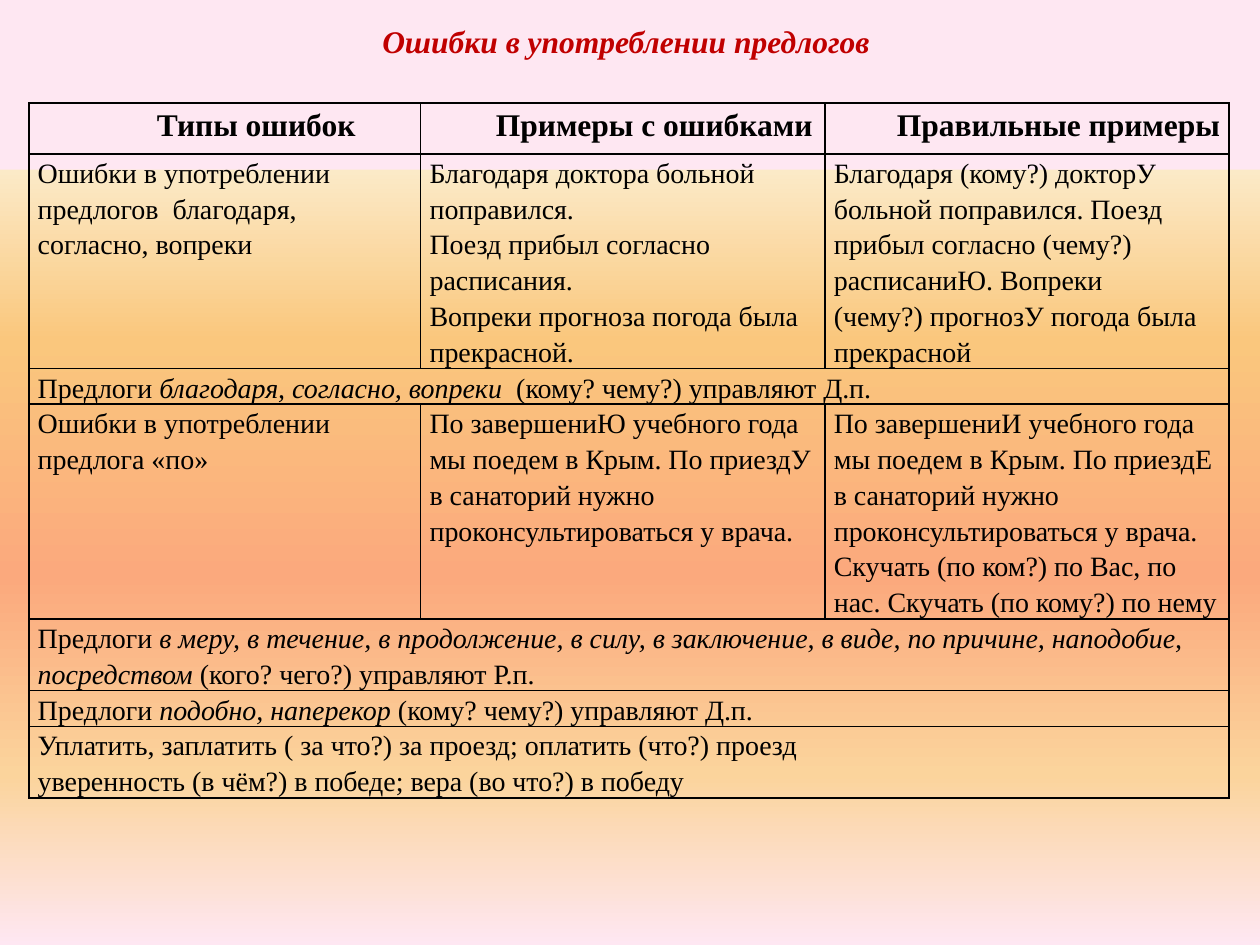
from lxml.etree import SubElement
from pptx import Presentation
from pptx.dml.color import RGBColor
from pptx.enum.text import MSO_ANCHOR, PP_ALIGN
from pptx.oxml.ns import qn
from pptx.util import Cm, Pt

FONT = "Times New Roman"
BLACK, RED = "000000", "C00000"
GRADIENT = [(0, "FEE7F2"), (17.9, "FEE7F2"), (18, "FBEAC7"), (36, "FAC77D"),
            (61, "FBA97D"), (82, "FBD49C"), (100, "FEE7F2")]

TITLE = "Ошибки в употреблении предлогов"
COLUMN_WIDTHS = [7.9, 8.15, 8.15]
ROW_HEIGHTS = [1.02, 3.07, 0.51, 4.11, 1.02, 0.51, 1.02]
JUSTIFIED_FROM = 5
# Each cell is a list of paragraphs; asterisks enclose italics.
# A row with a single cell spans the whole table.
ROWS = [
    [["Типы ошибок"], ["Примеры с ошибками"], ["Правильные примеры"]],
    [["Ошибки в употреблении предлогов  благодаря, согласно, вопреки"],
     ["Благодаря доктора больной поправился.",
      "Поезд прибыл согласно расписания.",
      "Вопреки прогноза погода была прекрасной."],
     ["Благодаря (кому?) докторУ больной поправился. Поезд прибыл "
      "согласно (чему?) расписаниЮ. Вопреки",
      "(чему?) прогнозУ погода была прекрасной"]],
    [["Предлоги *благодаря, согласно, вопреки * (кому? чему?) управляют Д.п."]],
    [["Ошибки в употреблении предлога «по»"],
     ["По завершениЮ учебного года мы поедем в Крым. По приездУ "
      "в санаторий нужно проконсультироваться у врача."],
     ["По завершениИ учебного года мы поедем в Крым. По приездЕ "
      "в санаторий нужно проконсультироваться у врача.",
      "Скучать (по ком?) по Вас, по нас. Скучать (по кому?) по нему"]],
    [["Предлоги *в меру, в течение, в продолжение, в силу, в заключение, "
      "в виде, по причине, наподобие, посредством *(кого? чего?) управляют Р.п."]],
    [["Предлоги *подобно, наперекор* (кому? чему?) управляют Д.п."]],
    [["Уплатить, заплатить ( за что?) за проезд; оплатить (что?) проезд",
      "уверенность (в чём?) в победе; вера (во что?) в победу"]],
]


def color(value):
    return RGBColor.from_string(value)


def set_font(font, size, value, bold):
    font.name, font.size, font.bold = FONT, Pt(size), bold
    font.color.rgb = color(value)


def paint_background(page):
    fill = page.background.fill
    fill.gradient()
    fill.gradient_angle = 270
    stops = page.element.find(".//" + qn("a:gsLst"))
    for stop in list(stops):
        stops.remove(stop)
    for position, value in GRADIENT:
        stop = SubElement(stops, qn("a:gs"), pos=str(round(position * 1000)))
        SubElement(stop, qn("a:srgbClr"), val=value)


def place_title(page, left, top, width, height):
    title = page.shapes.title
    title.left, title.top, title.width, title.height = left, top, width, height
    frame = title.text_frame
    frame.text = TITLE
    frame.vertical_anchor = MSO_ANCHOR.MIDDLE
    para = frame.paragraphs[0]
    para.alignment = PP_ALIGN.CENTER
    set_font(para.font, 18, RED, True)
    para.font.italic = True


def draw_borders(cell):
    properties = cell._tc.get_or_add_tcPr()
    for side in ("lnL", "lnR", "lnT", "lnB"):
        line = SubElement(properties, qn("a:" + side), w=str(Pt(1)))
        fill = SubElement(line, qn("a:solidFill"))
        SubElement(fill, qn("a:srgbClr"), val=BLACK)


def write_cell(cell, texts, header, alignment):
    frame = cell.text_frame
    for index, text in enumerate(texts):
        para = frame.add_paragraph() if index else frame.paragraphs[0]
        para.alignment = alignment
        para.line_spacing = 1.15
        set_font(para.font, 18 if header else 16, BLACK, header)
        if header:
            para._p.get_or_add_pPr().set("marL", str(Cm(1.27)))
        for part, words in enumerate(text.split("*")):
            span = para.add_run()
            span.text = words
            if part % 2:
                span.font.italic = True


def place_table(page, left, top, width, height):
    table = page.shapes.add_table(len(ROWS), len(COLUMN_WIDTHS),
                                  left, top, width, height).table
    table.first_row = table.horz_banding = False
    for column, size in zip(table.columns, COLUMN_WIDTHS):
        column.width = Cm(size)
    for row, size in zip(table.rows, ROW_HEIGHTS):
        row.height = Cm(size)
    for cell in table.iter_cells():
        cell.margin_left = cell.margin_right = Cm(0.18)
        cell.margin_top = cell.margin_bottom = 0
        draw_borders(cell)
        cell.fill.background()
    for index, row in enumerate(ROWS):
        if len(row) == 1:
            table.cell(index, 0).merge(table.cell(index, len(COLUMN_WIDTHS) - 1))
        if index == 0:
            alignment = PP_ALIGN.CENTER
        elif index >= JUSTIFIED_FROM:
            alignment = PP_ALIGN.JUSTIFY
        else:
            alignment = PP_ALIGN.LEFT
        for column, texts in enumerate(row):
            write_cell(table.cell(index, column), texts, index == 0, alignment)


def main():
    deck = Presentation()
    deck.slide_width, deck.slide_height = Cm(25.4), Cm(19.05)
    page = deck.slides.add_slide(deck.slide_layouts[5])
    paint_background(page)
    place_title(page, Cm(1.19), Cm(0), Cm(22.86), Cm(1.63))
    place_table(page, Cm(0.58), Cm(2.08),
                Cm(sum(COLUMN_WIDTHS)), Cm(sum(ROW_HEIGHTS)))
    deck.save("out.pptx")


if __name__ == "__main__":
    main()
